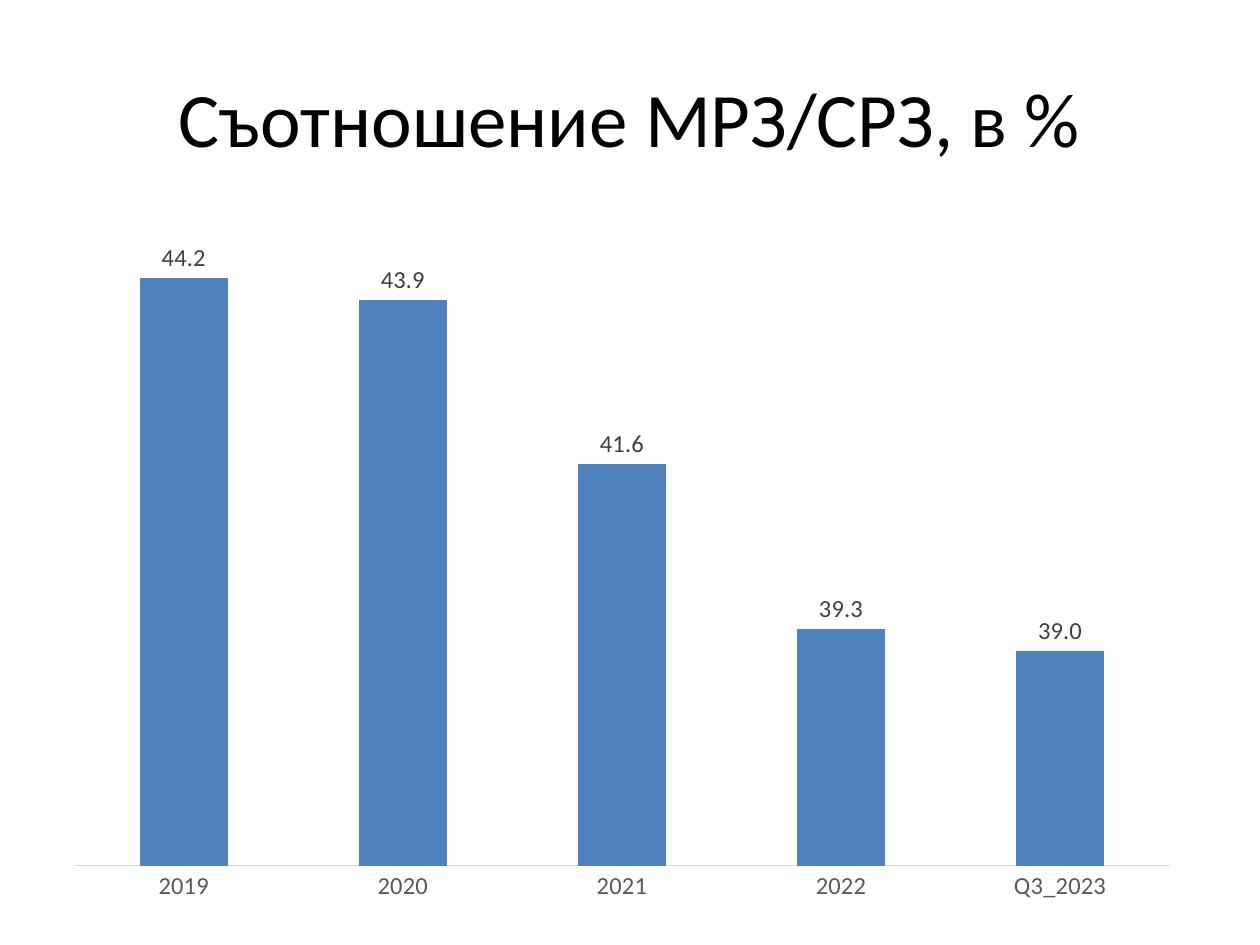
from typing import NamedTuple

from lxml.etree import SubElement
from pptx import Presentation
from pptx.chart.chart import Chart
from pptx.chart.data import CategoryChartData
from pptx.dml.color import RGBColor
from pptx.enum.chart import XL_CHART_TYPE, XL_LABEL_POSITION, XL_LEGEND_POSITION, XL_TICK_MARK
from pptx.enum.text import MSO_ANCHOR, PP_ALIGN
from pptx.oxml.ns import qn
from pptx.slide import Slide
from pptx.text.text import Font
from pptx.util import Inches, Pt

SLIDE_WIDTH, SLIDE_HEIGHT = Inches(10), Inches(7.5)
TYPEFACE = "Calibri"


class Area(NamedTuple):
    left: float
    top: float
    width: float
    height: float

    def on_slide(self) -> tuple[int, int, int, int]:
        return (
            int(self.left * SLIDE_WIDTH),
            int(self.top * SLIDE_HEIGHT),
            int(self.width * SLIDE_WIDTH),
            int(self.height * SLIDE_HEIGHT),
        )


class WageRatio(NamedTuple):
    period: str
    percent: float


TITLE_AREA = Area(0.05, 0.04, 0.9, 1 / 6)
RATIO_AREA = Area(0.05, 1.55 / 7.5, 0.9, 5.66 / 7.5)
PLOT_AREA = Area(0.01, 0.036, 0.966, 0.904)
RATIOS = [
    WageRatio("2019", 44.2),
    WageRatio("2020", 43.9),
    WageRatio("2021", 41.6),
    WageRatio("2022", 39.3),
    WageRatio("Q3_2023", 39.0),
]


def color(value: str) -> RGBColor:
    return RGBColor.from_string(value)


def style_font(font: Font, size: float, shade: str) -> None:
    font.name = TYPEFACE
    font.size = Pt(size)
    font.bold = False
    font.color.rgb = color(shade)


def add_title(slide: Slide, wording: str) -> None:
    frame = slide.shapes.add_textbox(*TITLE_AREA.on_slide()).text_frame
    frame.word_wrap = True
    frame.vertical_anchor = MSO_ANCHOR.MIDDLE
    paragraph = frame.paragraphs[0]
    paragraph.alignment = PP_ALIGN.CENTER
    run = paragraph.add_run()
    run.text = wording
    style_font(run.font, 44, "000000")


def place_plot(chart: Chart, area: Area) -> None:
    plot_area = chart.element.find(".//" + qn("c:plotArea"))
    for automatic in plot_area.findall(qn("c:layout")):
        plot_area.remove(automatic)
    layout = SubElement(plot_area, qn("c:layout"))
    plot_area.insert(0, layout)
    manual = SubElement(layout, qn("c:manualLayout"))
    settings = {
        "layoutTarget": "inner",
        "xMode": "edge",
        "yMode": "edge",
        "x": area.left,
        "y": area.top,
        "w": area.width,
        "h": area.height,
    }
    for tag, setting in settings.items():
        SubElement(manual, qn(f"c:{tag}")).set("val", str(setting))


def add_ratio_chart(slide: Slide, ratios: list[WageRatio]) -> None:
    ratio_data = CategoryChartData(number_format="0.0")
    ratio_data.categories = [ratio.period for ratio in ratios]
    ratio_data.add_series("Series 1", [ratio.percent for ratio in ratios])
    chart = slide.shapes.add_chart(
        XL_CHART_TYPE.COLUMN_CLUSTERED, *RATIO_AREA.on_slide(), ratio_data
    ).chart
    style_font(chart.font, 10, "000000")
    chart.has_title = False
    chart.has_legend = False
    place_plot(chart, PLOT_AREA)

    periods = chart.category_axis
    periods.major_tick_mark = periods.minor_tick_mark = XL_TICK_MARK.NONE
    periods.has_major_gridlines = False
    style_font(periods.tick_labels.font, 14, "595959")
    periods.format.line.color.rgb = color("D9D9D9")
    periods.format.line.width = Pt(0.75)

    percents = chart.value_axis
    percents.minimum_scale, percents.maximum_scale = 36, 45
    percents.has_major_gridlines = False
    percents.visible = False
    percents.tick_labels.number_format = "0.0"
    percents.tick_labels.number_format_is_linked = False

    columns = chart.plots[0]
    columns.gap_width = 150
    columns.overlap = -25
    columns.vary_by_categories = False
    series = columns.series[0]
    series.format.fill.solid()
    series.format.fill.fore_color.rgb = color("4F81BD")
    labels = series.data_labels
    labels.show_value = True
    labels.position = XL_LABEL_POSITION.OUTSIDE_END
    labels.number_format = "0.0"
    labels.number_format_is_linked = False
    style_font(labels.font, 14, "404040")


def main() -> None:
    deck = Presentation()
    deck.slide_width, deck.slide_height = SLIDE_WIDTH, SLIDE_HEIGHT
    slide = deck.slides.add_slide(deck.slide_layouts[6])
    add_title(slide, "Съотношение МРЗ/СРЗ, в %")
    add_ratio_chart(slide, RATIOS)
    deck.save("out.pptx")


if __name__ == "__main__":
    main()
